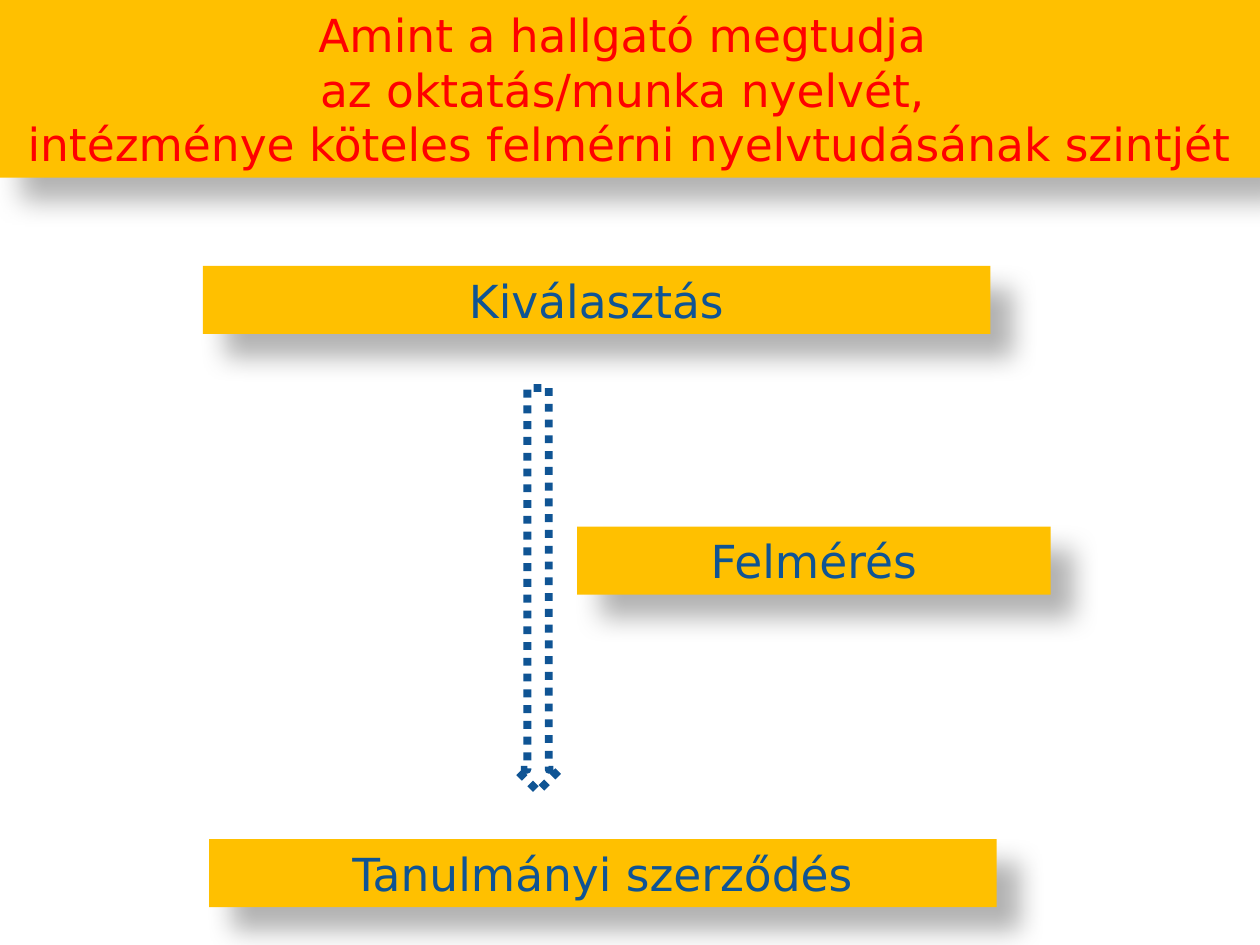
"""Builds the slide on assessing a student's language level before the learning agreement."""
import pptx
import pptx.util
import pptx.dml.color
import pptx.enum.dml
import pptx.enum.shapes
import pptx.enum.text
import pptx.oxml
import pptx.oxml.ns

Inches = pptx.util.Inches
Pt = pptx.util.Pt
RGBColor = pptx.dml.color.RGBColor
SHAPES = pptx.enum.shapes.MSO_SHAPE

GOLD = RGBColor(0xFF, 0xC0, 0x00)
BLUE = RGBColor(0x0F, 0x54, 0x94)
RED = RGBColor(0xFF, 0x00, 0x00)
FONT = "DejaVu Sans"

STEP_HEIGHT = 0.54
STEPS = [
    ("Kiválasztás", 1.61, 2.11, 6.25),
    ("Tanulmányi szerződés", 1.66, 6.66, 6.25),
    ("Felmérés", 4.58, 4.18, 3.76),
]
HEADING = [
    "Amint a hallgató megtudja ",
    "az oktatás/munka nyelvét, ",
    "intézménye köteles felmérni nyelvtudásának szintjét",
]

SHADOW = (
    f'<a:effectLst {pptx.oxml.ns.nsdecls("a")}>'
    f'<a:outerShdw blurRad="{Pt(15)}" dist="{Pt(18)}" dir="{45 * 60000}" '
    'algn="tl" rotWithShape="0"><a:srgbClr val="000000">'
    '<a:alpha val="30000"/></a:srgbClr></a:outerShdw></a:effectLst>'
)


def write(frame, lines, color=BLUE, size=26, font=FONT):
    """Writes lines into one centred paragraph."""
    paragraph = frame.paragraphs[0]
    paragraph.alignment = pptx.enum.text.PP_ALIGN.CENTER
    for index, line in enumerate(lines):
        if index:
            paragraph.add_line_break()
        run = paragraph.add_run()
        run.text = line
        run.font.name = font
        run.font.size = Pt(size)
        run.font.color.rgb = color


def add_banner(slide, lines, left, top, width, height, **text_format):
    """Adds a gold box with a soft shadow and centred text."""
    banner = slide.shapes.add_shape(
        SHAPES.RECTANGLE, Inches(left), Inches(top), Inches(width), Inches(height))
    banner.fill.solid()
    banner.fill.fore_color.rgb = GOLD
    banner.line.fill.background()
    banner._element.spPr.append(pptx.oxml.parse_xml(SHADOW))
    frame = banner.text_frame
    frame.word_wrap = True
    frame.auto_size = pptx.enum.text.MSO_AUTO_SIZE.SHAPE_TO_FIT_TEXT
    frame.vertical_anchor = pptx.enum.text.MSO_ANCHOR.MIDDLE
    write(frame, lines, **text_format)


def add_flow_arrow(slide):
    """Adds the dotted outline arrow pointing down."""
    arrow = slide.shapes.add_shape(
        SHAPES.RIGHT_ARROW, Inches(2.67), Inches(4.51), Inches(3.2), Inches(0.34))
    arrow.rotation = 90
    arrow.shadow.inherit = False
    arrow.fill.background()
    arrow.line.color.rgb = BLUE
    arrow.line.width = Pt(4.5)
    arrow.line.dash_style = pptx.enum.dml.MSO_LINE.ROUND_DOT


def main():
    """Builds and saves the slide."""
    deck = pptx.Presentation()
    deck.slide_width, deck.slide_height = Inches(10), Inches(7.5)
    slide = deck.slides.add_slide(deck.slide_layouts[6])
    add_flow_arrow(slide)
    for step, left, top, width in STEPS:
        add_banner(slide, [step], left, top, width, STEP_HEIGHT)
    add_banner(slide, HEADING, 0, 0, 10, 1.41, color=RED)
    deck.save("out.pptx")


if __name__ == "__main__":
    main()
